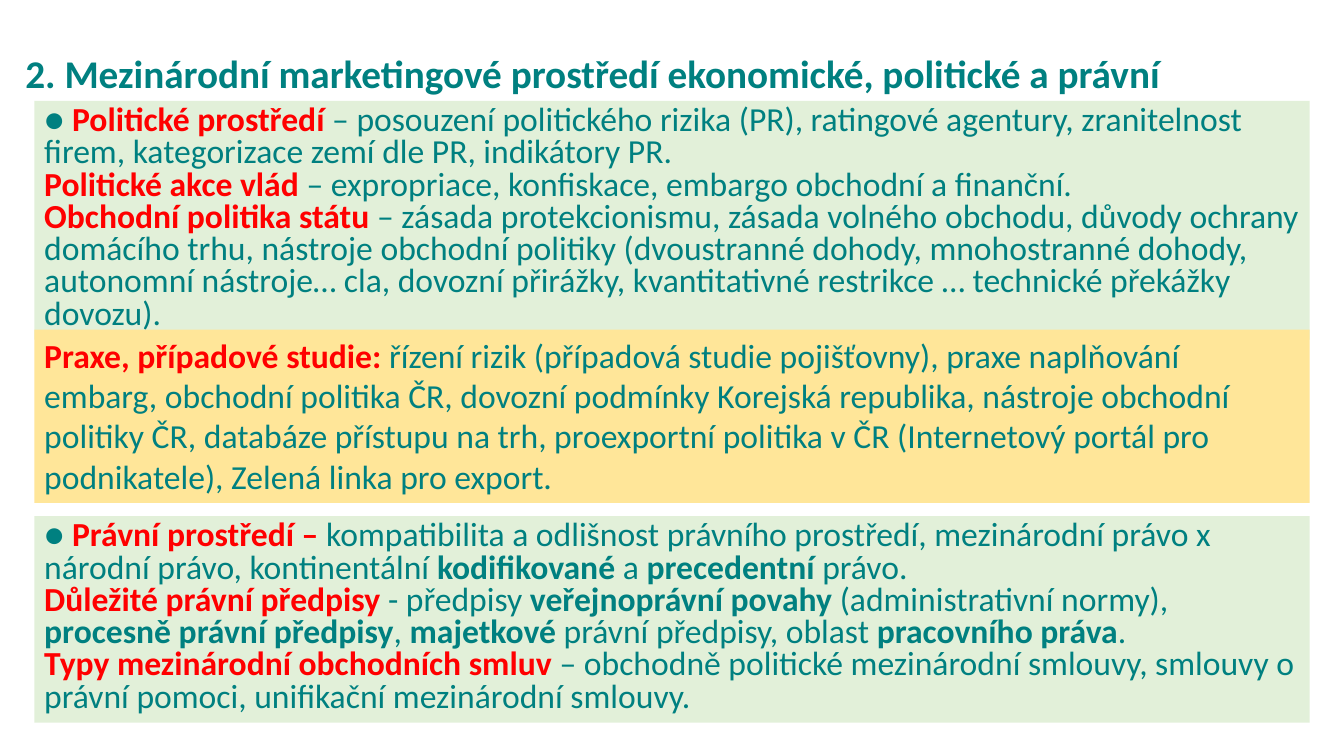
from dataclasses import dataclass

from pptx import Presentation
from pptx.dml.color import RGBColor
from pptx.enum.shapes import MSO_SHAPE
from pptx.enum.text import MSO_ANCHOR, PP_ALIGN
from pptx.slide import Slide
from pptx.util import Emu, Pt

RECT = MSO_SHAPE.RECTANGLE
TOP = MSO_ANCHOR.TOP
LEFT, CENTER = PP_ALIGN.LEFT, PP_ALIGN.CENTER
EMU_PER_PX = 9144


@dataclass(frozen=True)
class Theme:
    font: str = "Calibri"
    title_size: int = 28
    body_size: int = 24
    teal: str = "008080"
    red: str = "FF0000"
    green_fill: str = "E2F0D9"
    yellow_fill: str = "FFE699"


THEME = Theme()


@dataclass(frozen=True)
class Span:
    text: str
    bold: bool = False
    color: str = THEME.teal
    break_before: bool = False


@dataclass(frozen=True)
class Panel:
    top: int
    height: int
    fill: str
    line_spacing: float
    paragraphs: list[list[Span]]


def key(text: str) -> Span:
    return Span(text, True, THEME.red)


def strong(text: str, break_before: bool = False) -> Span:
    return Span(text, True, break_before=break_before)


PANEL_LEFT, PANEL_WIDTH = 34, 1265
TITLE = "2. Mezinárodní marketingové prostředí ekonomické, politické a právní"

POLITICAL = [
    [
        strong("● "),
        key("Politické prostředí "),
        Span("– posouzení politického rizika (PR), ratingové agentury, zranitelnost "
             "firem, kategorizace zemí dle PR, indikátory PR."),
    ],
    [
        key("Politické akce vlád "),
        Span("– expropriace, konfiskace, embargo obchodní a finanční."),
    ],
    [
        key("Obchodní politika státu "),
        Span("– zásada protekcionismu, zásada volného obchodu, důvody ochrany "
             "domácího trhu, nástroje obchodní politiky (dvoustranné dohody, "
             "mnohostranné dohody, autonomní nástroje… cla, dovozní přirážky, "
             "kvantitativné restrikce … technické překážky dovozu)."),
    ],
]

PRACTICE = [
    [
        key("Praxe, případové studie: "),
        Span("řízení rizik (případová studie pojišťovny), praxe naplňování embarg, "
             "obchodní politika ČR, dovozní podmínky Korejská republika, nástroje "
             "obchodní politiky ČR, databáze přístupu na trh, proexportní politika "
             "v ČR (Internetový portál pro podnikatele), Zelená linka pro export."),
    ],
]

LEGAL = [
    [
        strong("● "),
        key("Právní prostředí – "),
        Span("kompatibilita a odlišnost právního prostředí, mezinárodní právo x "
             "národní právo, kontinentální "),
        strong("kodifikované "),
        Span("a "),
        strong("precedentní "),
        Span("právo."),
    ],
    [
        key("Důležité právní předpisy "),
        Span("- předpisy "),
        strong("veřejnoprávní povahy "),
        Span("(administrativní normy),"),
        strong("procesně právní předpisy", break_before=True),
        Span(", "),
        strong("majetkové "),
        Span("právní předpisy, oblast "),
        strong("pracovního práva"),
        Span("."),
    ],
    [
        key("Typy mezinárodní obchodních smluv "),
        Span("– obchodně politické mezinárodní smlouvy, smlouvy o právní pomoci, "
             "unifikační mezinárodní smlouvy."),
    ],
]

PANELS = [
    Panel(100, 237, THEME.green_fill, 0.8, POLITICAL),
    Panel(327, 172, THEME.yellow_fill, 1.0, PRACTICE),
    Panel(512, 205, THEME.green_fill, 0.8, LEGAL),
]


def px(n: int) -> Emu:
    return Emu(n * EMU_PER_PX)


def add_title(s: Slide) -> None:
    sp = s.shapes.add_textbox(px(8), px(44), px(1159), px(104))
    tf = sp.text_frame
    tf.word_wrap = False
    p = tf.paragraphs[0]
    p.text = TITLE
    p.alignment = CENTER
    p.font.name = THEME.font
    p.font.size = Pt(THEME.title_size)
    p.font.bold = True
    p.font.color.rgb = RGBColor.from_string(THEME.teal)


def add_panel(s: Slide, panel: Panel) -> None:
    sp = s.shapes.add_shape(
        RECT, px(PANEL_LEFT), px(panel.top), px(PANEL_WIDTH), px(panel.height))
    sp.shadow.inherit = False
    sp.fill.solid()
    sp.fill.fore_color.rgb = RGBColor.from_string(panel.fill)
    sp.line.fill.background()
    tf = sp.text_frame
    tf.word_wrap = True
    tf.vertical_anchor = TOP
    for i, spans in enumerate(panel.paragraphs):
        p = tf.add_paragraph() if i else tf.paragraphs[0]
        p.alignment = LEFT
        p.line_spacing = panel.line_spacing
        p.font.name = THEME.font
        p.font.size = Pt(THEME.body_size)
        for span in spans:
            if span.break_before:
                p.add_line_break()
            r = p.add_run()
            r.text = span.text
            r.font.bold = span.bold
            r.font.color.rgb = RGBColor.from_string(span.color)


def main() -> None:
    prs = Presentation()
    prs.slide_width, prs.slide_height = px(1333), px(750)
    s = prs.slides.add_slide(prs.slide_layouts[6])
    add_title(s)
    for panel in PANELS:
        add_panel(s, panel)
    prs.save("out.pptx")


if __name__ == "__main__":
    main()
